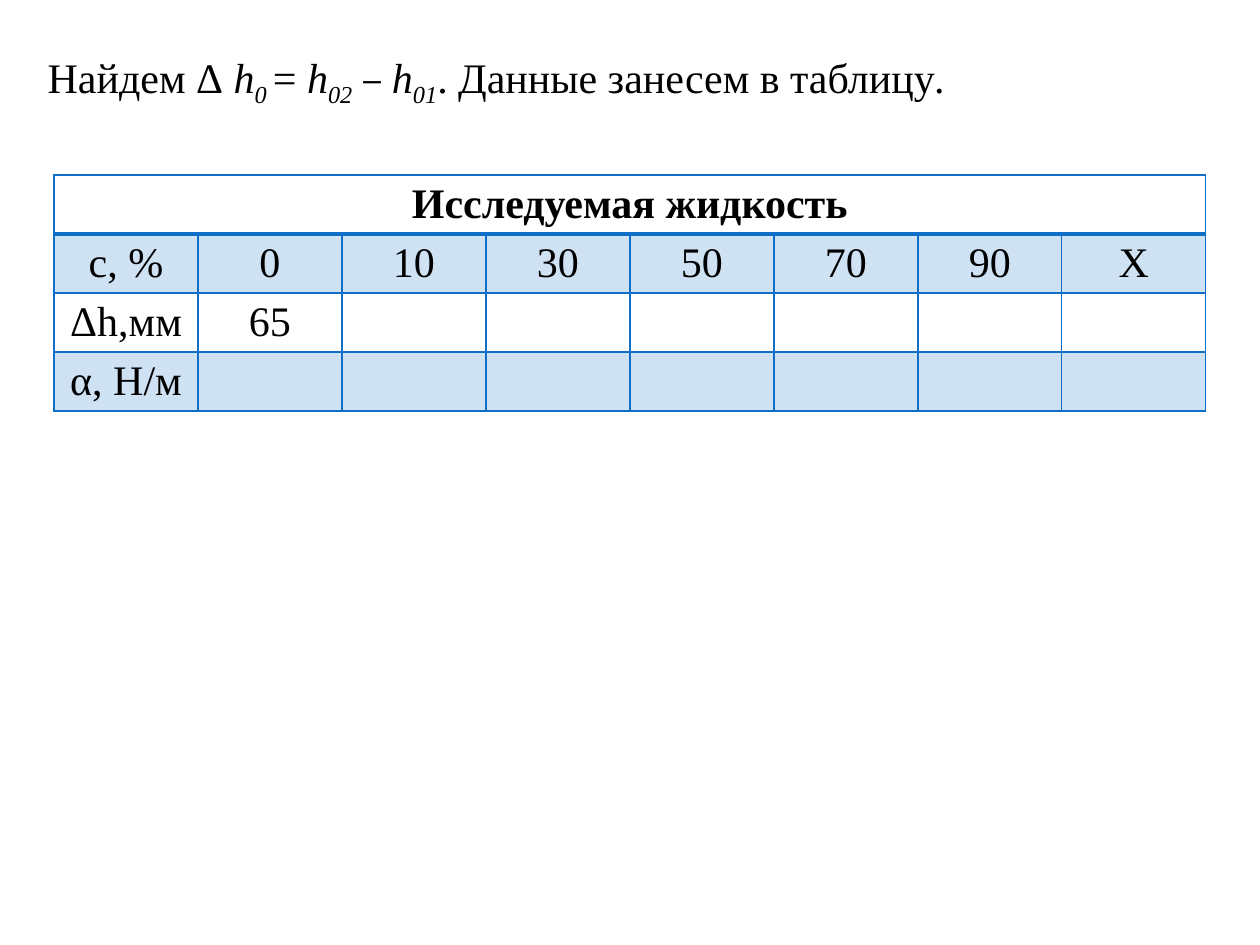
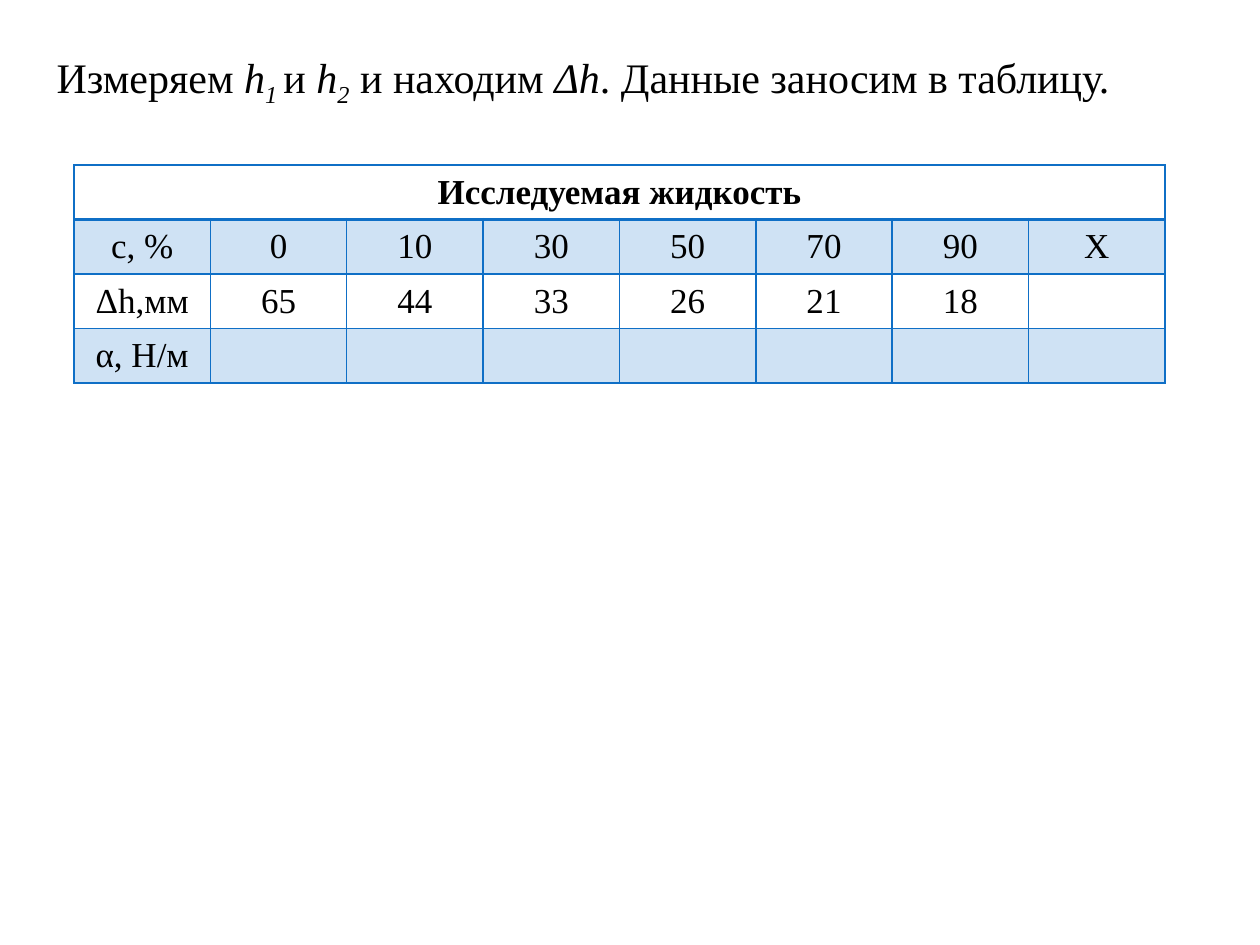
from lxml import etree
from pptx import Presentation
from pptx import util as u
from pptx.dml.color import RGBColor
from pptx.enum import text
from pptx.oxml import ns

BLACK = RGBColor(0x00, 0x00, 0x00)
BLUE = RGBColor(0x0F, 0x6F, 0xC6)
BAND = RGBColor(0xCF, 0xE2, 0xF4)
FONT = "Times New Roman"
CAPTION = "Исследуемая жидкость"
CONCENTRATIONS = ["с, %", "0", "10", "30", "50", "70", "90", "Х"]
COLUMNS = len(CONCENTRATIONS)
ROWS = 4
TITLE_SIZE = 24


def px(n):
    """Pixels at 126 to the inch, as EMU."""
    return u.Emu(round(n * 914400 / 126))


def add_run(paragraph, words, size, bold=False, italic=False, font=FONT):
    run = paragraph.add_run()
    run.text = words
    run.font.name = font
    run.font.size = u.Pt(size)
    run.font.bold = bold
    run.font.italic = italic
    run.font.color.rgb = BLACK
    return run


# Title parts are (words, style): i = italic, s = italic subscript, c = Cambria
slides = [
    dict(
        title=[("Найдем Δ", ""), (" h", "i"), ("0 ", "s"), ("=", ""), (" h", "i"),
               ("02", "s"), (" – ", "c"), ("h", "i"), ("01", "s"),
               (". Данные занесем в таблицу", ""), (".", "i")],
        title_box=(35, 45, 1131, 63),
        align=text.PP_ALIGN.JUSTIFY,
        table_box=(54, 175, 1152, 236),
        size=24,
        heights=["65"],
    ),
    dict(
        title=[("Измеряем ", ""), ("h", "i"), ("1 ", "s"), ("и ", ""), ("h", "i"),
               ("2", "s"), (" и находим ", ""), ("Δh", "i"),
               (". Данные заносим в таблицу.", "")],
        title_box=(44, 45, 1171, 63),
        align=text.PP_ALIGN.LEFT,
        table_box=(74, 165, 1091, 218),
        size=20,
        heights=["65", "44", "33", "26", "21", "18"],
    ),
]

prs = Presentation()
prs.slide_width, prs.slide_height = px(1260), px(945)

for content in slides:
    slide = prs.slides.add_slide(prs.slide_layouts[5])

    title = slide.shapes.title
    title.left, title.top, title.width, title.height = map(px, content["title_box"])
    frame = title.text_frame
    frame.word_wrap = True
    frame.auto_size = text.MSO_AUTO_SIZE.NONE
    frame.vertical_anchor = text.MSO_ANCHOR.TOP
    sentence = frame.paragraphs[0]
    sentence.alignment = content["align"]
    for words, style in content["title"]:
        run = add_run(sentence, words, TITLE_SIZE, italic=style in ("i", "s"),
                      font="Cambria" if style == "c" else FONT)
        if style == "s":
            run.font._element.set("baseline", "-25000")

    left, top, width, height = map(px, content["table_box"])
    table = slide.shapes.add_table(ROWS, COLUMNS, left, top, width, height).table
    table.first_row = table.horz_banding = False
    for column in table.columns:
        column.width = width // COLUMNS
    for row in table.rows:
        row.height = height // ROWS
    table.cell(0, 0).merge(table.cell(0, COLUMNS - 1))

    values = [[CAPTION], CONCENTRATIONS, ["Δh,мм"] + content["heights"], ["α, Н/м"]]
    for r in range(ROWS):
        for c in range(COLUMNS):
            cell = table.cell(r, c)
            cell.margin_top = cell.margin_bottom = px(5)
            cell.margin_left = cell.margin_right = px(6)
            cell.vertical_anchor = text.MSO_ANCHOR.MIDDLE

            properties = cell._tc.get_or_add_tcPr()
            for side in ("L", "R", "T", "B"):
                under_caption = (r, side) in ((0, "B"), (1, "T"))
                line = etree.SubElement(properties, ns.qn(f"a:ln{side}"),
                                        w=str(u.Pt(2 if under_caption else 1)))
                solid = etree.SubElement(line, ns.qn("a:solidFill"))
                etree.SubElement(solid, ns.qn("a:srgbClr"), val=str(BLUE))

            if r % 2:
                cell.fill.solid()
                cell.fill.fore_color.rgb = BAND
            else:
                cell.fill.background()

            if c < len(values[r]):
                entry = cell.text_frame.paragraphs[0]
                entry.alignment = text.PP_ALIGN.CENTER
                add_run(entry, values[r][c], content["size"], bold=r == 0)

prs.save("out.pptx")
